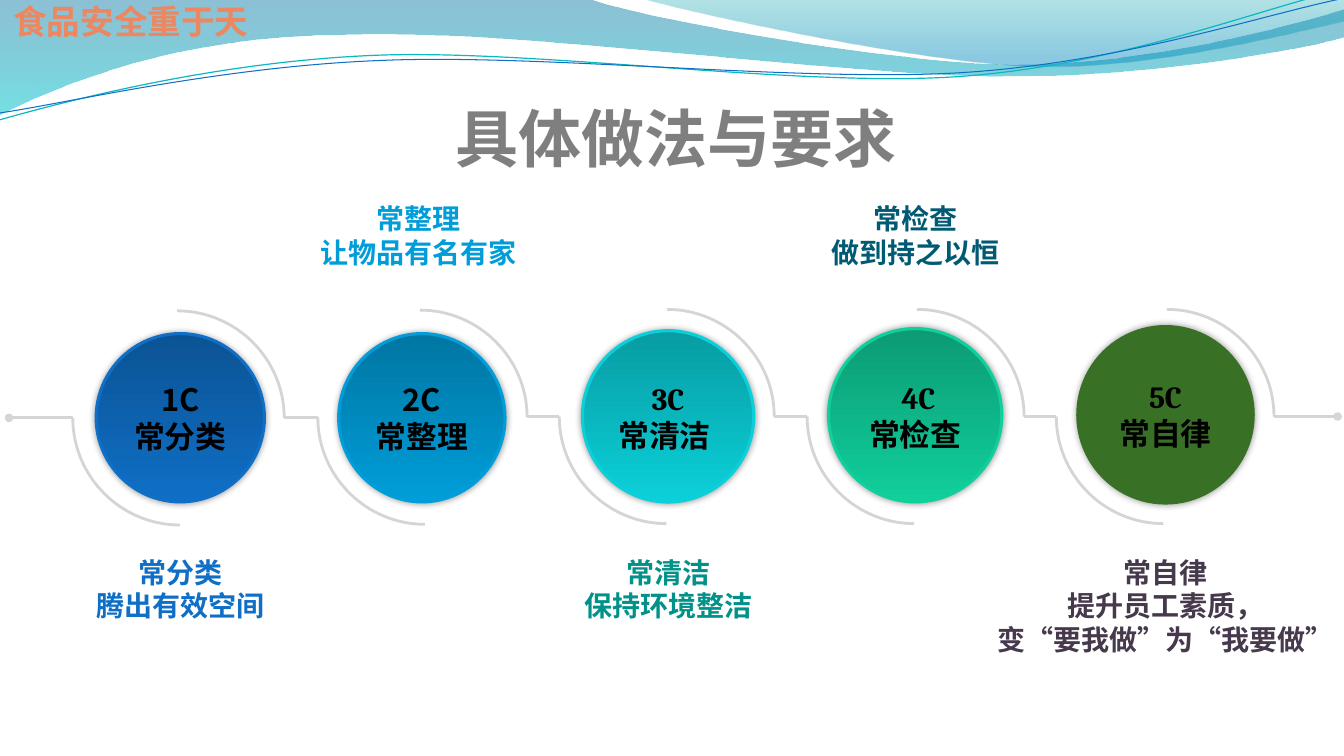
import pptx
import pptx.util
import pptx.oxml
import pptx.oxml.ns
import pptx.dml.color
import pptx.enum.shapes
import pptx.enum.text

Pt = pptx.util.Pt
qn = pptx.oxml.ns.qn
CJK = "Noto Sans CJK SC"
GREY = "D5D5D5"
DRAWING_NS = 'xmlns:a="http://schemas.openxmlformats.org/drawingml/2006/main"'


def rgb(value):
    return pptx.dml.color.RGBColor.from_string(value)


def trace(start, pieces, closed=False):
    """Add an outline; a piece is an end point or two Bezier handles and an end point."""
    points = [(Pt(piece[i]), Pt(piece[i + 1]))
              for piece in pieces for i in range(0, len(piece), 2)]
    builder = slide.shapes.build_freeform(Pt(start[0]), Pt(start[1]), scale=1.0)
    builder.add_line_segments(points, close=closed)
    outline = builder.convert_to_shape()
    outline.shadow.inherit = False
    if not closed:
        outline.fill.background()
    steps = iter(list(outline._element.iter(qn("a:lnTo"))))
    for piece in pieces:
        first = next(steps)
        if len(piece) == 6:
            curve = pptx.oxml.parse_xml(f"<a:cubicBezTo {DRAWING_NS}/>")
            first.addprevious(curve)
            for step in (first, next(steps), next(steps)):
                curve.append(step[0])
                step.getparent().remove(step)
    return outline


deck = pptx.Presentation()
deck.slide_width, deck.slide_height = Pt(960), Pt(540)
slide = deck.slides.add_slide(deck.slide_layouts[6])

gradients = []  # shape, then (position, colour, opacity in percent) twice
strokes = []    # shape, colour, width
texts = []      # frame, [(line, font)], size, colour

# Waves across the top
broad_wave = trace((0, -0.5), [
    (422.5, -0.5), (456.5, 12, 637, 45.5, 728, 45.5), (819.5, 45.5, 920, 18.5, 960, 6.5),
    (961, 26), (944, 31.5, 835, 54.5, 715.5, 54), (597, 54, 366.5, 20, 247, 24.5),
    (124, 25, 44, 60, -0.5, 81.5)], closed=True)
right_wave = trace((460, -0.5), [
    (489, 8, 654.5, 44.5, 738, 47), (821.5, 49.5, 923, 23, 960, 15), (960, 0)], closed=True)
gradients += [
    (broad_wave, (0, "0074A1", 45), (1, "00C6CF", 55)),
    (right_wave, (0, "00A1A9", 30), (0.8, "008BBF", 45)),
]
for wave in (broad_wave, right_wave):
    wave.line.fill.background()

teal_thread = trace((-2.2, 63.1), [
    (45, 52.1, 152.3, 29.1, 266, 29.6), (379.8, 29.9, 567.7, 66.8, 683.2, 64.4),
    (798.6, 61.9, 902.6, 25.7, 960.1, 15.5)])
blue_thread = trace((-1.3, 58), [
    (44.4, 53.7, 157.1, 32.3, 272.4, 33.4), (386.9, 33.8, 572.2, 63.4, 687, 61.6),
    (802.4, 59.8, 904.6, 30, 962.1, 21.3)])
for thread in (teal_thread, blue_thread):
    thread.rotation = 357.3
strokes += [(teal_thread, "0AB8BF", 0.85), (blue_thread, "0F6FC6", 0.75)]

# Circles: left, top, width, height, dark, bright, label, label font, name, name font
circles = [
    (68.7, 238.3, 120.2, 120.2, "0B5394", "0F6FC6", "1C", CJK, "常分类", "Roboto Condensed"),
    (241.9, 238.3, 118.8, 120.2, "0076A3", "009DD9", "2C", CJK, "常整理", "Roboto Condensed"),
    (416, 236.2, 122.4, 122.4, "089CA3", "0BD0D9", "3C", "Cambria", "常清洁 ", "Cambria"),
    (591.8, 234.7, 123.8, 123.8, "0C9B74", "10CF9B", " 4C", "Cambria", "常检查", "Cambria"),
    (769.9, 233.3, 125.3, 126, "387026", "387026", "5C", "Cambria", "常自律", "Cambria"),
]
for left, top, width, height, dark, bright, label, label_font, name, name_font in circles:
    circle = slide.shapes.add_shape(pptx.enum.shapes.MSO_SHAPE.OVAL,
                                    Pt(left), Pt(top), Pt(width), Pt(height))
    circle.shadow.inherit = False
    if dark == bright:
        circle.fill.solid()
        circle.fill.fore_color.rgb = rgb(dark)
    else:
        gradients.append((circle, (0, dark, 100), (1, bright, 100)))
    strokes.append((circle, bright, 2.25))
    circle._element.spPr.find(qn("a:effectLst")).append(pptx.oxml.parse_xml(
        f'<a:outerShdw {DRAWING_NS} blurRad="{Pt(5)}" dist="0" dir="0" rotWithShape="0">'
        '<a:srgbClr val="000000"><a:alpha val="40000"/></a:srgbClr></a:outerShdw>'))
    circle.text_frame.vertical_anchor = pptx.enum.text.MSO_ANCHOR.MIDDLE
    texts.append((circle.text_frame, [(label, label_font), (name, name_font)], 22, "000000"))

# Winding track: left joint, right joint and height of each bend
bends = [(52, 203, 298.5), (227, 376.5, 298), (399.5, 553, 297.5),
         (576.5, 731.5, 297.5), (754.5, 910, 297.5)]
radius = 76.5
handle = radius * 0.55
for left, right, y in bends:
    for x, way in ((left, 1), (right, -1)):
        end_x, end_y = x + way * radius, y + way * radius
        arc = trace((x, y), [(x, y + way * handle, end_x - way * handle, end_y, end_x, end_y)])
        strokes.append((arc, GREY, 2))

link_starts = [6.5] + [right for _, right, _ in bends[:-1]]
links = [(start, left, y) for start, (left, _, y) in zip(link_starts, bends)]
links.append((955.5, 910, 297.5))
for start, end, y in links:
    link = slide.shapes.add_connector(pptx.enum.shapes.MSO_CONNECTOR.STRAIGHT,
                                      Pt(start), Pt(y), Pt(end), Pt(y))
    link._element.spPr.append(pptx.oxml.parse_xml(f"<a:effectLst {DRAWING_NS}/>"))
    strokes.append((link, GREY, 2))
    if (start, end, y) in (links[0], links[-1]):
        link.line.fill.solid()
        link.line._get_or_add_ln().append(
            pptx.oxml.parse_xml(f'<a:headEnd {DRAWING_NS} type="oval"/>'))

# Captions, title and banner: left, top, width, height, size, colour, font, lines
blocks = [
    (196, 71.3, 574, 54, 45, "7F7F7F", "Calibri", ["具体做法与要求"]),
    (61, 393, 136, 55.5, 20, "0F6FC6", CJK, ["常分类", "腾出有效空间"]),
    (220.5, 140.7, 157, 55.5, 20, "009DD9", CJK, ["常整理", "让物品有名有家"]),
    (409.5, 393, 136, 55.5, 20, "009288", CJK, ["常清洁", "保持环境整洁"]),
    (586, 140.7, 136, 55.5, 20, "015A74", CJK, ["常检查", "做到持之以恒"]),
    (703.5, 393, 258.5, 80, 20, "46394C", CJK,
     ["常自律", "提升员工素质，", "变“要我做”为“我要做”"]),
    (0.3, -3, 186.5, 36, 24, "ED8760", CJK, ["食品安全重于天"]),
]
for left, top, width, height, size, colour, font, lines in blocks:
    frame = slide.shapes.add_textbox(Pt(left), Pt(top), Pt(width), Pt(height)).text_frame
    frame.word_wrap = size != 20
    if size == 45:
        title_format = {"vertical_anchor": pptx.enum.text.MSO_ANCHOR.BOTTOM, "margin_left": 0,
                        "margin_right": 0, "margin_top": Pt(3.6), "margin_bottom": 0}
        for key, value in title_format.items():
            setattr(frame, key, value)
    texts.append((frame, [(line, font) for line in lines], size, colour))

for shape, *stops in gradients:
    shape.fill.gradient()
    shape.fill.gradient_angle = 270
    for stop, (position, colour, _) in zip(shape.fill.gradient_stops, stops):
        stop.position = position
        stop.color.rgb = rgb(colour)
    tints = shape._element.spPr.findall(f"{qn('a:gradFill')}//{qn('a:srgbClr')}")
    for tint, (_, _, opacity) in zip(tints, stops):
        if opacity < 100:
            tint.append(pptx.oxml.parse_xml(f'<a:alpha {DRAWING_NS} val="{opacity * 1000}"/>'))

for shape, colour, width in strokes:
    shape.line.color.rgb = rgb(colour)
    shape.line.width = Pt(width)

for frame, lines, size, colour in texts:
    for index, (line, font) in enumerate(lines):
        paragraph = frame.add_paragraph() if index else frame.paragraphs[0]
        paragraph.alignment = pptx.enum.text.PP_ALIGN.CENTER
        run = paragraph.add_run()
        run.text = line
        for key, value in {"size": Pt(size), "bold": True, "name": font}.items():
            setattr(run.font, key, value)
        run.font.color.rgb = rgb(colour)
        run.font._element.append(
            pptx.oxml.parse_xml(f'<a:ea {DRAWING_NS} typeface="{CJK}"/>'))

deck.save("out.pptx")
